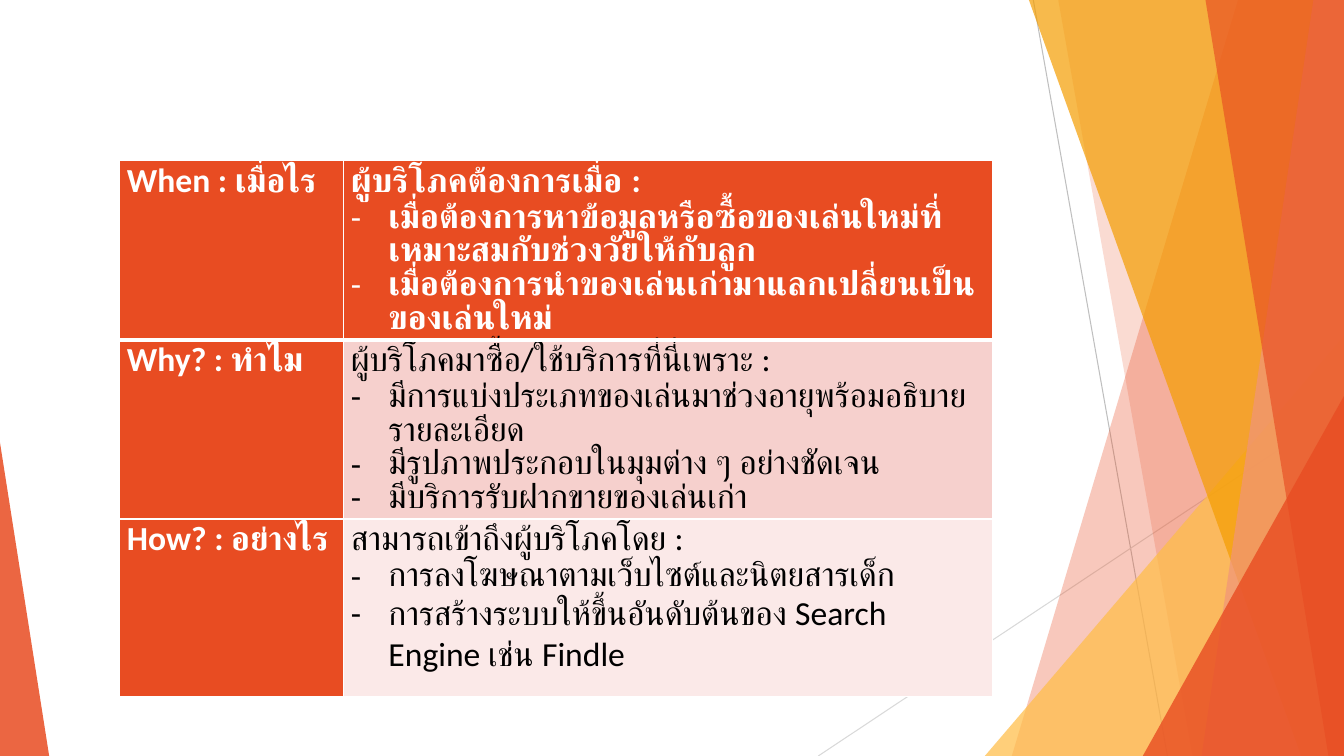
from lxml.etree import SubElement
from pptx import Presentation
from pptx.dml.color import RGBColor
from pptx.enum.shapes import MSO_CONNECTOR, MSO_SHAPE
from pptx.oxml.ns import qn
from pptx.util import Cm, Pt

WHITE = RGBColor(0xFF, 0xFF, 0xFF)
BLACK = RGBColor(0x00, 0x00, 0x00)
ORANGE = RGBColor(0xE8, 0x4C, 0x22)
YELLOW = RGBColor(0xFF, 0xBD, 0x47)
AMBER = RGBColor(0xF4, 0x9D, 0x00)
SALMON = RGBColor(0xF1, 0x94, 0x7A)
PINK = RGBColor(0xF6, 0xD0, 0xCD)
PALE_PINK = RGBColor(0xFB, 0xE9, 0xE8)
GREY = RGBColor(0xBF, 0xBF, 0xBF)
LIGHT_GREY = RGBColor(0xD9, 0xD9, 0xD9)
WIDTH, HEIGHT = 33.87, 19.05


def paint(shape, color, opacity):
    """Give a shape a see-through fill without outline or shadow."""
    shape.shadow.inherit = False
    shape.line.fill.background()
    shape.fill.solid()
    shape.fill.fore_color.rgb = color
    color_element = shape._element.spPr.find(qn("a:solidFill"))[0]
    SubElement(color_element, qn("a:alpha"), val=str(opacity * 1000))


def add_border(cell, side, width):
    """Draw one white cell border; call before the cell is filled."""
    line = SubElement(cell._tc.get_or_add_tcPr(), qn(f"a:{side}"), w=str(Pt(width)))
    fill = SubElement(line, qn("a:solidFill"))
    SubElement(fill, qn("a:srgbClr"), val=str(WHITE))


presentation = Presentation()
presentation.slide_width = Cm(WIDTH)
presentation.slide_height = Cm(HEIGHT)
slide = presentation.slides.add_slide(presentation.slide_layouts[6])

# Thin crossing lines
for x1, y1, x2, y2, color in [
    (26.04, 0, 29.42, HEIGHT, GREY),
    (WIDTH, 10.24, 20.62, HEIGHT, LIGHT_GREY),
]:
    connector = slide.shapes.add_connector(
        MSO_CONNECTOR.STRAIGHT, Cm(x1), Cm(y1), Cm(x2), Cm(y2))
    connector.line.color.rgb = color
    connector.line.width = Pt(0.75)
    SubElement(connector._element.spPr, qn("a:effectLst"))

# Facets: bands (top x, bottom x) reach the right edge, triangles (left, top, right, tip)
facets = [
    ((31.2, 25.5), ORANGE, 30),
    ((26.67, 30.05), ORANGE, 20),
    ((24.82, 8.46, WIDTH, 1), YELLOW, 72),
    ((25.93, 32.79), AMBER, 70),
    ((33.1, 30.28), SALMON, 70),
    ((30.38, 33.48), ORANGE, 65),
    ((28.8, 9.98, WIDTH, 1), ORANGE, 80),
    ((0, 11.15, 1.24, 0), ORANGE, 85),
]
for outline, color, opacity in facets:
    if len(outline) == 2:
        top_x, bottom_x = outline
        builder = slide.shapes.build_freeform(Cm(top_x), 0)
        builder.add_line_segments([
            (Cm(WIDTH), 0), (Cm(WIDTH), Cm(HEIGHT)), (Cm(bottom_x), Cm(HEIGHT))])
        facet = builder.convert_to_shape()
    else:
        left, top, right, tip = outline
        facet = slide.shapes.add_shape(
            MSO_SHAPE.ISOSCELES_TRIANGLE,
            Cm(left), Cm(top), Cm(right - left), Cm(HEIGHT - top))
        facet.adjustments[0] = tip
    paint(facet, color, opacity)

# Table: question, then a lead line followed by dashed points
rows = [
    (4.52, ORANGE, "When : เมื่อไร", [
        "ผู้บริโภคต้องการเมื่อ :",
        "เมื่อต้องการหาข้อมูลหรือซื้อของเล่นใหม่ที่เหมาะสมกับช่วงวัยให้กับลูก",
        "เมื่อต้องการนำของเล่นเก่ามาแลกเปลี่ยนเป็นของเล่นใหม่"]),
    (4.52, PINK, "Why? : ทำไม", [
        "ผู้บริโภคมาซื้อ/ใช้บริการที่นี่เพราะ :",
        "มีการแบ่งประเภทของเล่นมาช่วงอายุพร้อมอธิบายรายละเอียด",
        "มีรูปภาพประกอบในมุมต่าง ๆ อย่างชัดเจน",
        "มีบริการรับฝากขายของเล่นเก่า"]),
    (4.47, PALE_PINK, "How? : อย่างไร", [
        "สามารถเข้าถึงผู้บริโภคโดย :",
        "การลงโฆษณาตามเว็บไซต์และนิตยสารเด็ก",
        "การสร้างระบบให้ขึ้นอันดับต้นของ Search Engine เช่น Findle"]),
]
table = slide.shapes.add_table(
    len(rows), 2, Cm(3.02), Cm(4.04), Cm(22), Cm(13.51)).table
table.columns[0].width = Cm(5.64)
table.columns[1].width = Cm(16.36)

for row_index, (height, answer_fill, question, answer) in enumerate(rows):
    table.rows[row_index].height = Cm(height)
    for column_index, lines in enumerate([[question], answer]):
        cell = table.cell(row_index, column_index)
        emphasized = row_index == 0 or column_index == 0
        cell.margin_left = cell.margin_right = Cm(0.18)
        cell.margin_top = cell.margin_bottom = 0
        for side in ("lnL", "lnR", "lnT", "lnB"):
            heavy = (row_index, side) in [(0, "lnB"), (1, "lnT")]
            add_border(cell, side, 3 if heavy else 1)
        cell.fill.solid()
        cell.fill.fore_color.rgb = ORANGE if column_index == 0 else answer_fill

        cell.text_frame.text = "\n".join(lines)
        for line_index, paragraph in enumerate(cell.text_frame.paragraphs):
            font = paragraph.runs[0].font
            font.name = "Calibri"
            font.size = Pt(24)
            font.bold = emphasized
            font.color.rgb = WHITE if emphasized else BLACK
            if line_index > 0:
                properties = paragraph._p.get_or_add_pPr()
                properties.set("marL", str(Cm(0.95)))
                properties.set("indent", str(-Cm(0.95)))
                SubElement(properties, qn("a:buFont"), typeface="Calibri")
                SubElement(properties, qn("a:buChar"), char="-")

presentation.save("out.pptx")
